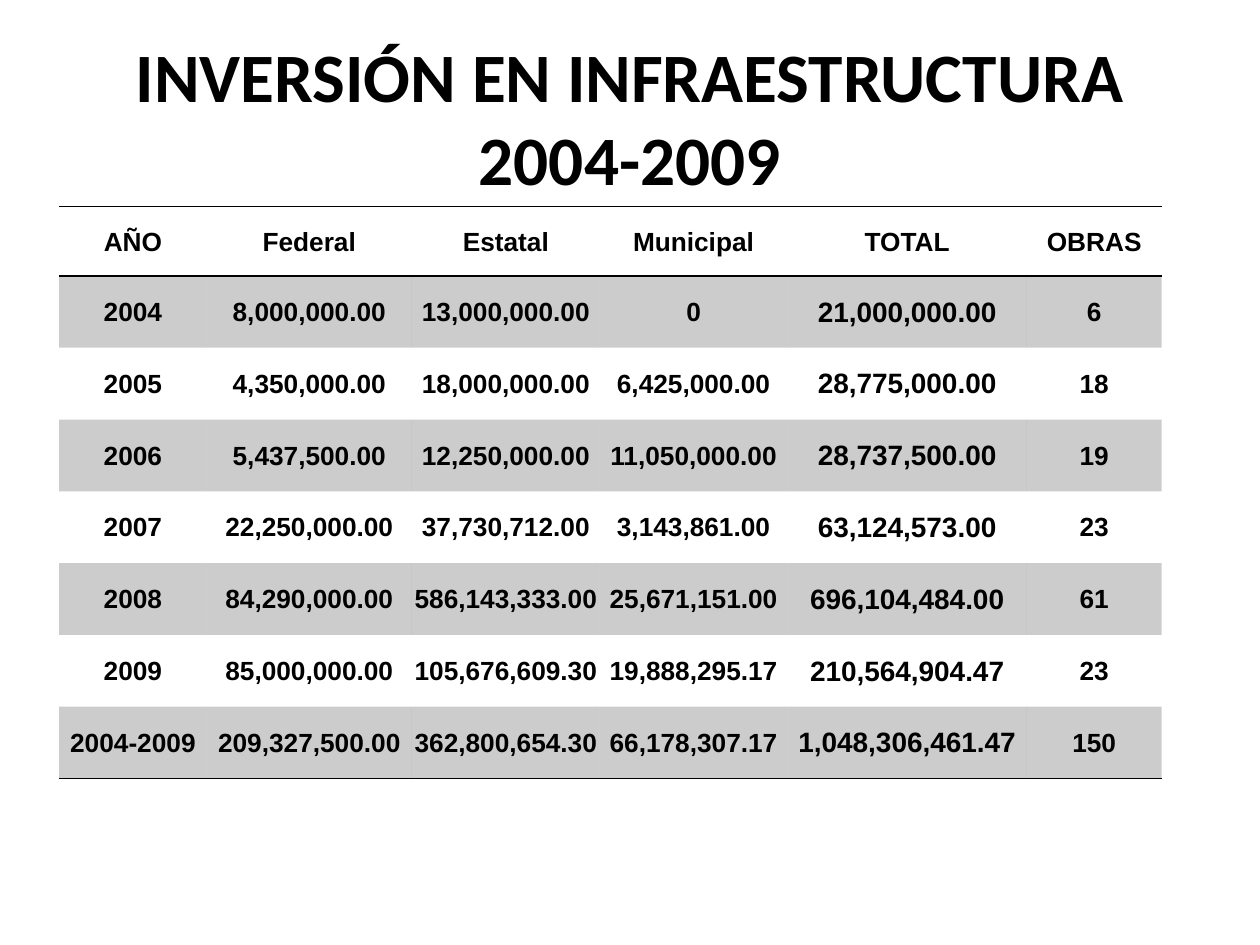
from dataclasses import dataclass

from lxml import etree
from pptx import Presentation
from pptx import util as u
from pptx.dml.color import RGBColor
from pptx.enum import text
from pptx.oxml import ns


@dataclass(frozen=True)
class Theme:
    ink: RGBColor = RGBColor(0, 0, 0)
    band_alpha: int = 20
    title_font: str = "Calibri"
    table_font: str = "Arial"
    title_size: float = 39.6
    table_size: float = 15
    total_size: float = 16
    rule_width: float = 1
    plain_table: str = "{2D5ABB26-0587-4C30-8999-92F81FD0307C}"


class SlideBuilder:
    """Draws titles and ruled, banded tables on one slide in a shared theme."""

    def __init__(self, slide, theme):
        self.slide = slide
        self.theme = theme

    def label(self, paragraph, wording, font_name, size):
        paragraph.text = wording
        paragraph.alignment = text.PP_ALIGN.CENTER
        font = paragraph.font
        font.name, font.size, font.bold = font_name, u.Pt(size), True
        font.color.rgb = self.theme.ink

    def title(self, wording, left, top, width, height):
        heading = self.slide.shapes.add_textbox(*map(u.Inches, (left, top, width, height)))
        frame = heading.text_frame
        frame.word_wrap = True
        frame.vertical_anchor = text.MSO_ANCHOR.MIDDLE
        self.label(frame.paragraphs[0], wording, self.theme.title_font, self.theme.title_size)

    def shade(self, cell):
        cell.fill.solid()
        cell.fill.fore_color.rgb = self.theme.ink
        ink = cell._tc.tcPr.find(".//" + ns.qn("a:srgbClr"))
        etree.SubElement(ink, ns.qn("a:alpha"), val=str(self.theme.band_alpha * 1000))

    def rule(self, cell, sides):
        properties = cell._tc.get_or_add_tcPr()
        for position, side in enumerate(sides):
            line = etree.Element(ns.qn(f"a:ln{side}"), w=str(u.Pt(self.theme.rule_width)))
            fill = etree.SubElement(line, ns.qn("a:solidFill"))
            etree.SubElement(fill, ns.qn("a:srgbClr"), val=str(self.theme.ink))
            properties.insert(position, line)

    def table(self, rows, left, top, widths, heights, total_column):
        box = map(u.Inches, (left, top, sum(widths), sum(heights)))
        grid = self.slide.shapes.add_table(len(rows), len(widths), *box).table
        grid._tbl.tblPr.find(ns.qn("a:tableStyleId")).text = self.theme.plain_table
        for column, width in zip(grid.columns, widths):
            column.width = u.Inches(width)
        for row, height in zip(grid.rows, heights):
            row.height = u.Inches(height)
        borders = {0: "TB", len(rows) - 1: "B"}
        for r, values in enumerate(rows):
            for c, value in enumerate(values):
                cell = grid.cell(r, c)
                cell.margin_left = cell.margin_right = cell.margin_top = u.Inches(0.01)
                cell.margin_bottom = 0
                cell.vertical_anchor = text.MSO_ANCHOR.MIDDLE
                is_total = r > 0 and c == total_column
                size = self.theme.total_size if is_total else self.theme.table_size
                self.label(cell.text_frame.paragraphs[0], value, self.theme.table_font, size)
                if r % 2:
                    self.shade(cell)
                else:
                    cell.fill.background()
                self.rule(cell, borders.get(r, ""))


INVESTMENT = [
    ("AÑO", "Federal", "Estatal", "Municipal", "TOTAL", "OBRAS"),
    ("2004", "8,000,000.00", "13,000,000.00", "0", "21,000,000.00", "6"),
    ("2005", "4,350,000.00", "18,000,000.00", "6,425,000.00", "28,775,000.00", "18"),
    ("2006", "5,437,500.00", "12,250,000.00", "11,050,000.00", "28,737,500.00", "19"),
    ("2007", "22,250,000.00", "37,730,712.00", "3,143,861.00", "63,124,573.00", "23"),
    ("2008", "84,290,000.00", "586,143,333.00", "25,671,151.00", "696,104,484.00", "61"),
    ("2009", "85,000,000.00", "105,676,609.30", "19,888,295.17", "210,564,904.47", "23"),
    ("2004-2009", "209,327,500.00", "362,800,654.30", "66,178,307.17", "1,048,306,461.47", "150"),
]


def main():
    deck = Presentation()
    deck.slide_width, deck.slide_height = u.Inches(10), u.Inches(7.5)
    builder = SlideBuilder(deck.slides.add_slide(deck.slide_layouts[6]), Theme())
    builder.title("INVERSIÓN EN INFRAESTRUCTURA 2004-2009", 0.5, 0.3, 9, 1.25)
    builder.table(
        INVESTMENT,
        left=0.47,
        top=1.64,
        widths=[1.17, 1.63, 1.49, 1.49, 1.9, 1.07],
        heights=[0.55] + [0.57] * (len(INVESTMENT) - 1),
        total_column=INVESTMENT[0].index("TOTAL"),
    )
    deck.save("out.pptx")


if __name__ == "__main__":
    main()
